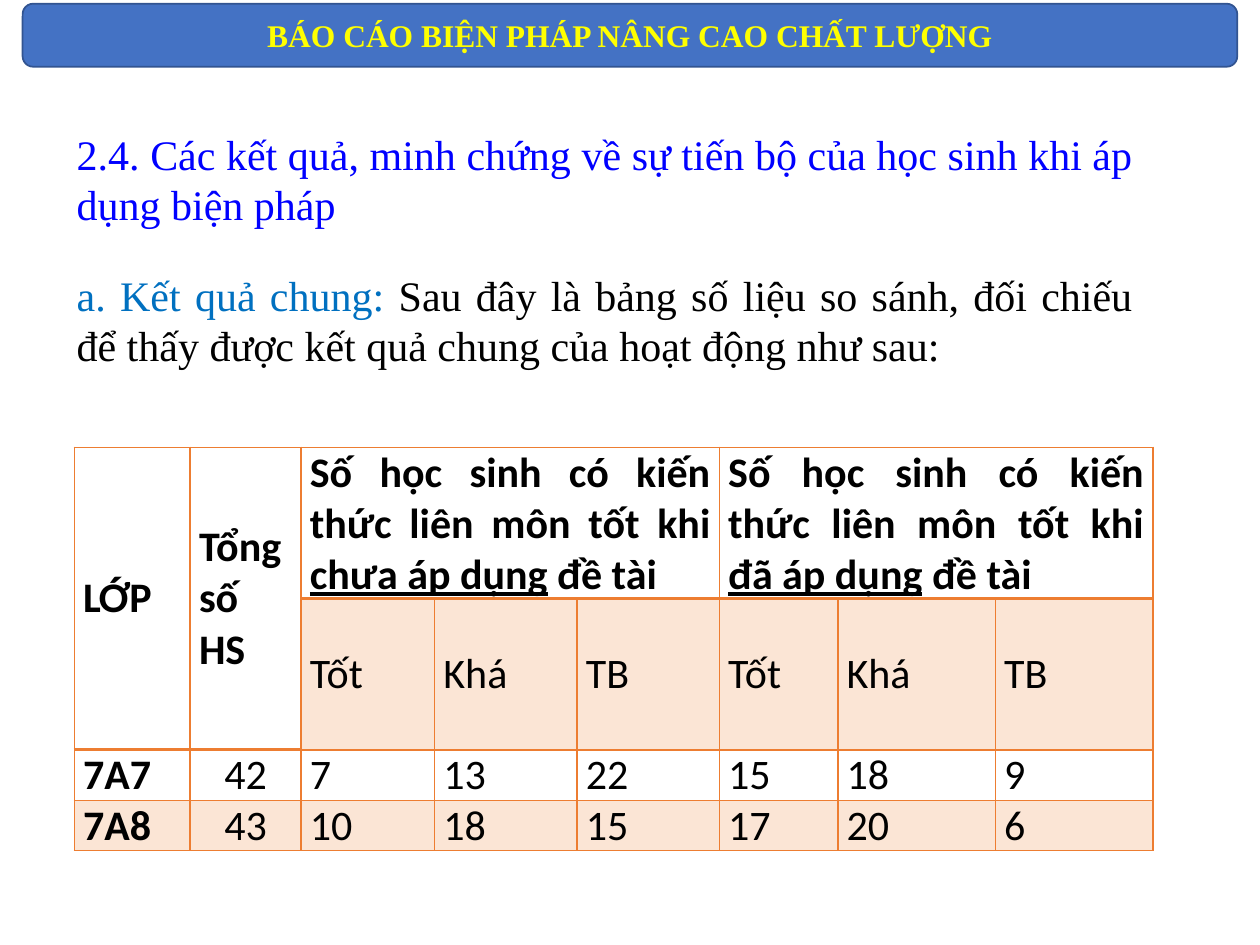
import pptx
import pptx.dml.color
import pptx.enum.shapes
import pptx.enum.text
import pptx.oxml
import pptx.oxml.ns
import pptx.util
from pptx.util import Inches, Pt

ALIGN = pptx.enum.text.PP_ALIGN
ANCHOR = pptx.enum.text.MSO_ANCHOR

THEME = {
    "serif": "Times New Roman", "sans": "Calibri",
    "banner_size": 18, "body_size": 24,
    "banner_fill": "4472C4", "banner_line": "325491", "banner_text": "FFFF00",
    "heading": "0000FF", "label": "0070C0", "text": "000000",
    "accent": "ED7D31", "band_opacity": 20,
}

# Content
BANNER = "BÁO CÁO BIỆN PHÁP NÂNG CAO CHẤT LƯỢNG"
PARAGRAPHS = [  # top, runs of (text, colour)
    (0.97, [("2.4. Các kết quả, minh chứng về sự tiến bộ của học sinh khi áp dụng biện pháp",
             "heading")]),
    (2.09, [("a. Kết quả chung: ", "label"),
            ("Sau đây là bảng số liệu so sánh, đối chiếu để thấy được kết quả chung "
             "của hoạt động như sau:", "text")]),
]
GROUP_START = "Số học sinh có kiến thức liên môn tốt khi "
GROUP_END = " đề tài"
LEVELS = ["Tốt", "Khá", "TB"]
ROWS = [
    ["LỚP", "Tổng số HS", "chưa áp dụng", "", "", "đã áp dụng", "", ""],
    ["", ""] + LEVELS * 2,
    ["7A7", "42", "7", "13", "22", "15", "18", "9"],
    ["7A8", "43", "10", "18", "15", "17", "20", "6"],
]
GROUP_COLUMNS = (2, 5)
MERGES = [((0, 0), (1, 0)), ((0, 1), (1, 1)), ((0, 2), (0, 4)), ((0, 5), (0, 7))]
COLUMN_WIDTHS = [0.92, 0.88, 1.06, 1.13, 1.13, 0.94, 1.25, 1.25]
ROW_HEIGHTS = [0.6, 0.21, 0.2, 0.32]


def colour(name):
    return pptx.dml.color.RGBColor.from_string(THEME[name])


def add_runs(paragraph, texts):
    for text in texts:
        paragraph.add_run().text = text
    return paragraph.runs


def style_font(font, face, size, colour_name=None, bold=False):
    font.name, font.size, font.bold = THEME[face], Pt(THEME[size]), bold
    if colour_name:
        font.color.rgb = colour(colour_name)


def in_header(row, column):
    return row == 0 or (row == 1 and column < 2)


def is_banded(row, column):
    return row in (1, 3) and not in_header(row, column)


def rule_below(row, column):
    return 2 if row >= 0 and in_header(row, column) else 1


def format_cell(cell, row, column):
    properties = cell._tc.get_or_add_tcPr()
    if is_banded(row, column):
        cell.fill.solid()
        cell.fill.fore_color.rgb = colour("accent")
        tint = properties.find(".//" + pptx.oxml.ns.qn("a:srgbClr"))
        tint.append(pptx.oxml.parse_xml(
            f'<a:alpha {pptx.oxml.ns.nsdecls("a")} val="{THEME["band_opacity"] * 1000}"/>'))
    else:
        cell.fill.background()
    # Borders come before the fill, in the order left, right, top, bottom
    weights = {"L": 1, "R": 1, "T": rule_below(row - 1, column), "B": rule_below(row, column)}
    for index, (side, weight) in enumerate(weights.items()):
        properties.insert(index, pptx.oxml.parse_xml(
            f'<a:ln{side} {pptx.oxml.ns.nsdecls("a")} w="{Pt(weight)}"><a:solidFill>'
            f'<a:srgbClr val="{THEME["accent"]}"/></a:solidFill></a:ln{side}>'))
    cell.margin_left = cell.margin_right = Inches(0.07)
    cell.margin_top = cell.margin_bottom = 0
    cell.vertical_anchor = ANCHOR.MIDDLE if row < 2 else ANCHOR.TOP


def fill_cell(cell, row, column, text):
    paragraph = cell.text_frame.paragraphs[0]
    paragraph.alignment = ALIGN.CENTER if row > 1 and column == 1 else ALIGN.JUSTIFY
    bold = in_header(row, column) or column == 0
    style_font(paragraph.font, "sans", "body_size", "text", bold)
    if row == 0 and column in GROUP_COLUMNS:
        runs = add_runs(paragraph, [GROUP_START, text, GROUP_END])
        runs[1].font.underline = True
    elif text:
        add_runs(paragraph, [text])


def add_paragraph_box(slide, top, parts):
    box = slide.shapes.add_textbox(Inches(0.51), Inches(top), Inches(8.58), Inches(0.91))
    frame = box.text_frame
    frame.word_wrap = True
    frame.auto_size = pptx.enum.text.MSO_AUTO_SIZE.SHAPE_TO_FIT_TEXT
    paragraph = frame.paragraphs[0]
    paragraph.alignment = ALIGN.JUSTIFY
    style_font(paragraph.font, "serif", "body_size")
    runs = add_runs(paragraph, [text for text, _ in parts])
    for run, (_, colour_name) in zip(runs, parts):
        run.font.color.rgb = colour(colour_name)


def add_results_table(slide):
    shape = slide.shapes.add_table(len(ROWS), len(COLUMN_WIDTHS), Inches(0.59), Inches(3.55),
                                   Inches(8.58), Inches(2.4))
    table = shape.table
    table.first_row = table.horz_banding = False
    for column, width in zip(table.columns, COLUMN_WIDTHS):
        column.width = Inches(width)
    for row, height in zip(table.rows, ROW_HEIGHTS):
        row.height = Inches(height)
    shape.height = Inches(2.4)
    for row, texts in enumerate(ROWS):
        for column, text in enumerate(texts):
            cell = table.cell(row, column)
            format_cell(cell, row, column)
            fill_cell(cell, row, column, text)
    for first, last in MERGES:
        table.cell(*first).merge(table.cell(*last))


def add_banner(slide):
    banner = slide.shapes.add_shape(pptx.enum.shapes.MSO_SHAPE.ROUNDED_RECTANGLE,
                                    Inches(0.18), Inches(0.03), Inches(9.64), Inches(0.5))
    banner.shadow.inherit = False
    banner.fill.solid()
    banner.fill.fore_color.rgb = colour("banner_fill")
    banner.line.color.rgb = colour("banner_line")
    banner.line.width = Pt(1)
    banner.text_frame.word_wrap = True
    banner.text_frame.vertical_anchor = ANCHOR.MIDDLE
    paragraph = banner.text_frame.paragraphs[0]
    paragraph.alignment = ALIGN.CENTER
    style_font(paragraph.font, "serif", "banner_size", "banner_text", bold=True)
    add_runs(paragraph, [BANNER])


def main():
    presentation = pptx.Presentation()
    presentation.slide_width, presentation.slide_height = Inches(10), Inches(7.5)
    slide = presentation.slides.add_slide(presentation.slide_layouts[6])
    for top, parts in PARAGRAPHS:
        add_paragraph_box(slide, top, parts)
    add_results_table(slide)
    add_banner(slide)
    presentation.save("out.pptx")


if __name__ == "__main__":
    main()
